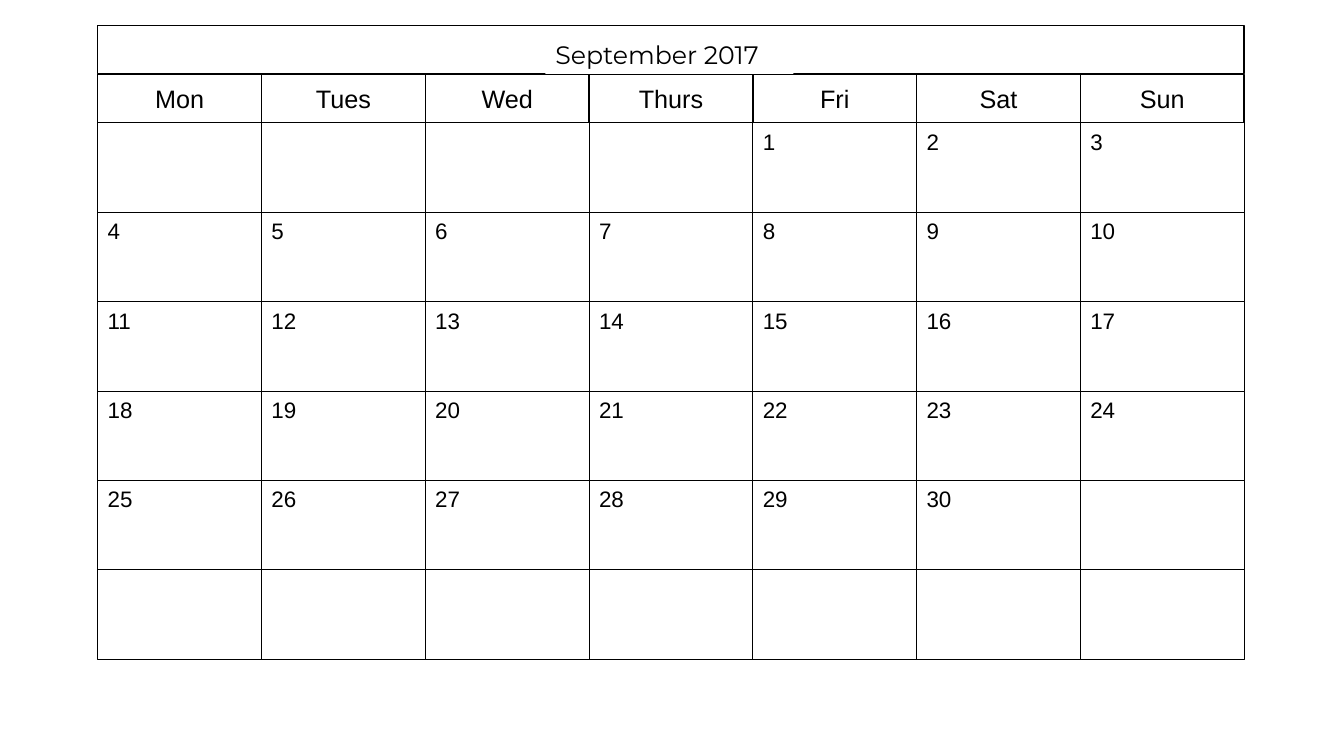
import pptx
import pptx.util
import pptx.dml.color
import pptx.enum.shapes
import pptx.enum.text

Inches = pptx.util.Inches
Pt = pptx.util.Pt
Align = pptx.enum.text.PP_ALIGN
Anchor = pptx.enum.text.MSO_ANCHOR


def paint(part, color):
    part.solid()
    part.fore_color.rgb = pptx.dml.color.RGBColor.from_string(color)


def add_cell(left, top, width, height, weight, text="", size=16, align=Align.LEFT):
    cell = slide.shapes.add_shape(
        pptx.enum.shapes.MSO_SHAPE.RECTANGLE,
        Inches(left), Inches(top), Inches(width), Inches(height))
    cell.shadow.inherit = False
    paint(cell.fill, "FFFFFF")
    paint(cell.line.fill, "000000")
    cell.line.width = Pt(weight)
    frame = cell.text_frame
    frame.text = text
    frame.vertical_anchor = Anchor.TOP
    line = frame.paragraphs[0]
    line.alignment = align
    for run in line.runs:
        run.font.name = "Arial"
        run.font.size = Pt(size)
        paint(run.font.fill, "000000")
    return frame


deck = pptx.Presentation()
deck.slide_width = Inches(13.33)
deck.slide_height = Inches(7.5)
slide = deck.slides.add_slide(deck.slide_layouts[6])

left, top, width = 0.97, 0.25, 11.37
days = ["Mon", "Tues", "Wed", "Thurs", "Fri", "Sat", "Sun"]
weeks = 6
first, last = 4, 30
head_top, head_high = 0.74, 0.48
grid_top = 1.22
day_wide = width / len(days)
day_high = 5.32 / weeks

add_cell(left, top, width, head_high, 1)

title = slide.shapes.add_textbox(Inches(5.41), Inches(0.34), Inches(2.46), Inches(0.4))
paint(title.fill, "FFFFFF")
title.text_frame.text = "September 2017"
title.text_frame.word_wrap = False
title.text_frame.auto_size = pptx.enum.text.MSO_AUTO_SIZE.SHAPE_TO_FIT_TEXT
font = title.text_frame.paragraphs[0].runs[0].font
font.name = "Montserrat"
font.size = Pt(18)
paint(font.fill, "000000")

for col, day in enumerate(days):
    frame = add_cell(left + col * day_wide, head_top, day_wide, head_high, 1,
                     day, 18, Align.CENTER)
    frame.vertical_anchor = Anchor.MIDDLE
    frame.margin_top = frame.margin_bottom = Inches(0.02)

for week in range(weeks):
    for col in range(len(days)):
        date = week * len(days) + col - first + 1
        text = str(date) if 1 <= date <= last else ""
        add_cell(left + col * day_wide, grid_top + week * day_high,
                 day_wide, day_high, 0.75, text)

deck.save("out.pptx")
